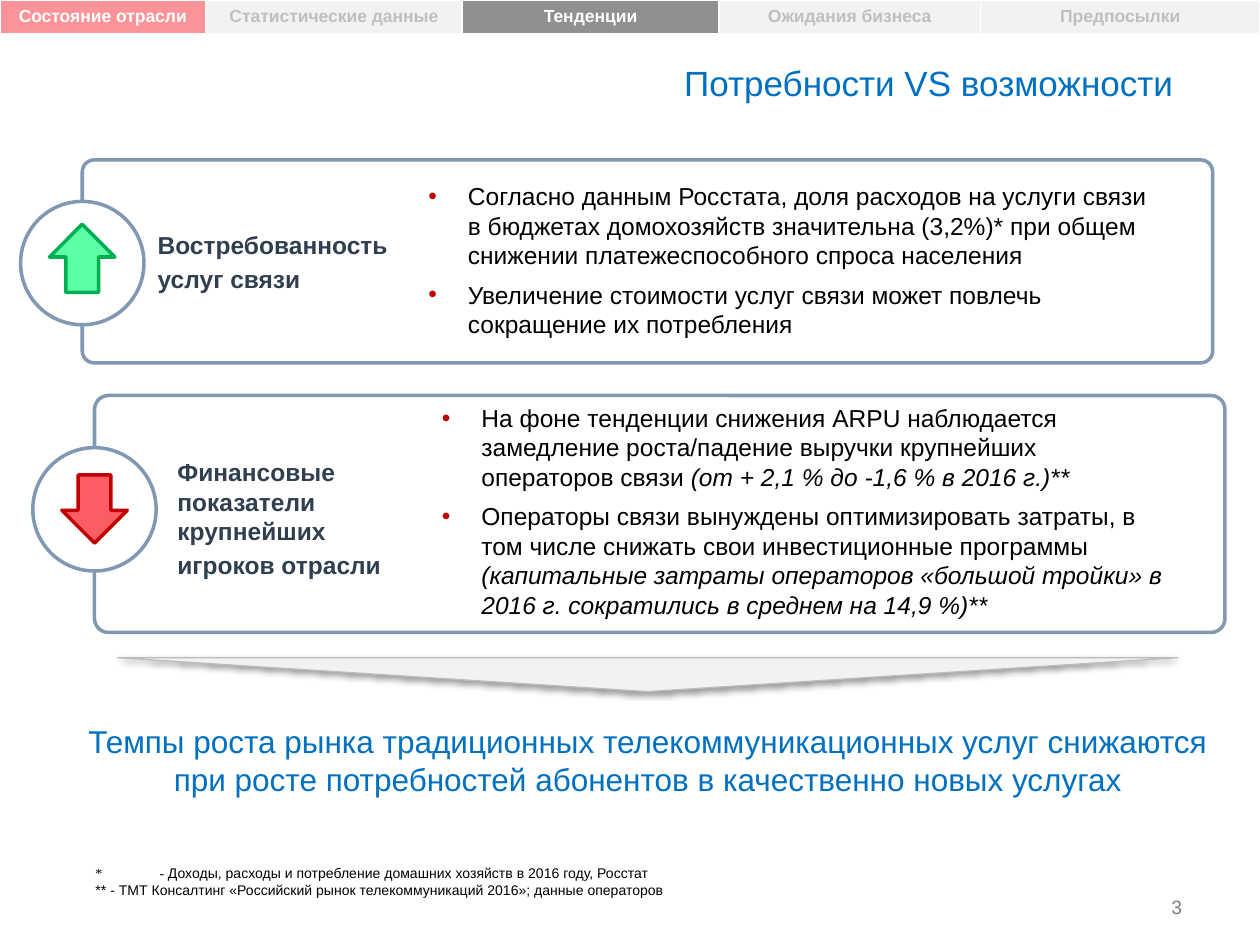
from dataclasses import dataclass

from lxml.etree import SubElement
from pptx import Presentation
from pptx.dml.color import RGBColor
from pptx.enum.shapes import MSO_SHAPE
from pptx.enum.text import MSO_ANCHOR, PP_ALIGN
from pptx.oxml.ns import qn
from pptx.util import Pt


@dataclass(frozen=True)
class Theme:
    """Colours, typeface and type sizes of the slide."""
    font: str = "Arial"
    marker_font: str = "Times New Roman"
    white: str = "FFFFFF"
    black: str = "000000"
    blue: str = "0070C0"
    label: str = "303F50"
    outline: str = "8098B2"
    bullet: str = "C00000"
    muted: str = "BFBFBF"
    pale: str = "F2F2F2"
    active: str = "909090"
    rose: str = "FC9398"
    edge: str = "BCBCBC"
    number: str = "7F7F7F"
    rise: tuple = ("5DFFA6", "00B050")
    fall: tuple = ("FB5D65", "C00000")
    title_size: int = 20
    conclusion_size: int = 18
    body_size: int = 14
    number_size: int = 11
    tab_size: int = 10
    note_size: int = 8


THEME = Theme()


def add_run(paragraph, text, size, color, **extra):
    """Append a run with its font formatting."""
    run = paragraph.add_run()
    run.text = text
    values = {"name": THEME.font, "size": Pt(size), **extra}
    for name, value in values.items():
        setattr(run.font, name, value)
    run.font.color.rgb = RGBColor.from_string(color)


def set_frame(frame, **extra):
    """Set wrapping, anchor and insets of a text frame."""
    values = {"word_wrap": True, "vertical_anchor": MSO_ANCHOR.TOP,
              "margin_left": Pt(7.2), "margin_right": Pt(7.2),
              "margin_top": Pt(3.6), "margin_bottom": Pt(3.6), **extra}
    for name, value in values.items():
        setattr(frame, name, value)


def write_lines(frame, lines, size, color, align=PP_ALIGN.LEFT, gap=0, **extra):
    """Write one paragraph per line, with a gap between paragraphs."""
    for index, line in enumerate(lines):
        paragraph = frame.paragraphs[0] if index == 0 else frame.add_paragraph()
        paragraph.alignment = align
        paragraph.space_before = Pt(gap if index else 0)
        add_run(paragraph, line, size, color, **extra)


def add_text(slide, box, lines, size, color, align, **insets):
    """Add a plain text box."""
    frame = slide.shapes.add_textbox(*map(Pt, box)).text_frame
    set_frame(frame, **insets)
    write_lines(frame, lines, size, color, align)


def add_figure(slide, kind, box, fill=None, line=None, width=2, adjust=None, rotation=0):
    """Add a preset shape with the given fill and line."""
    shape = slide.shapes.add_shape(kind, *map(Pt, box))
    shape.shadow.inherit = False
    shape.rotation = rotation
    if adjust is not None:
        shape.adjustments[0] = adjust
    if fill:
        shape.fill.solid()
        shape.fill.fore_color.rgb = RGBColor.from_string(fill)
    else:
        shape.fill.background()
    if line:
        shape.line.color.rgb = RGBColor.from_string(line)
        shape.line.width = Pt(width)
    else:
        shape.line.fill.background()
    return shape


def add_navigation(slide, box, tabs):
    """Add the one-row table of section tabs."""
    table = slide.shapes.add_table(1, len(tabs), *map(Pt, box)).table
    table.rows[0].height = Pt(box[3])
    for column, cell, (text, width, fill, color) in zip(table.columns, table.rows[0].cells, tabs):
        column.width = Pt(width)
        properties = cell._tc.get_or_add_tcPr()
        for side, weight in {"L": 1, "R": 1, "T": 1, "B": 3}.items():
            border = SubElement(properties, qn(f"a:ln{side}"), w=str(Pt(weight)))
            SubElement(SubElement(border, qn("a:solidFill")), qn("a:srgbClr"), val=THEME.white)
        cell.fill.solid()
        cell.fill.fore_color.rgb = RGBColor.from_string(fill)
        write_lines(cell.text_frame, [text], THEME.tab_size, color, PP_ALIGN.CENTER, bold=True)


def add_bullets(slide, box, items):
    """Add bulleted paragraphs whose second part is italic."""
    frame = slide.shapes.add_textbox(*map(Pt, box)).text_frame
    set_frame(frame)
    for index, (plain, italic) in enumerate(items):
        paragraph = frame.paragraphs[0] if index == 0 else frame.add_paragraph()
        properties = paragraph._p.get_or_add_pPr()
        properties.set("marL", str(Pt(22.5)))
        properties.set("indent", str(Pt(-22.5)))
        paragraph.space_before = Pt(5.75 if index else 0)
        SubElement(SubElement(properties, qn("a:buClr")), qn("a:srgbClr"), val=THEME.bullet)
        SubElement(properties, qn("a:buFont"), typeface=THEME.font)
        SubElement(properties, qn("a:buChar"), char="•")
        add_run(paragraph, plain, THEME.body_size, THEME.black)
        if italic:
            add_run(paragraph, italic, THEME.body_size, THEME.black, italic=True)


def add_panel(slide, box, label, label_offset, items, items_offset, circle_top, arrow_top, rotation, colors):
    """Add a framed panel with a round arrow badge, a label and bullets."""
    left, top, _, height = box
    badge, arrow_width, arrow_height = 70.5, 38.9, 37.4
    add_figure(slide, MSO_SHAPE.ROUNDED_RECTANGLE, box, line=THEME.outline, adjust=0.059)
    add_figure(slide, MSO_SHAPE.OVAL, (left - badge / 2, top + circle_top, badge, badge),
               THEME.white, THEME.outline)
    add_figure(slide, MSO_SHAPE.RIGHT_ARROW,
               (left - arrow_width / 2, top + arrow_top, arrow_width, arrow_height),
               *colors, rotation=rotation)
    caption = add_figure(slide, MSO_SHAPE.PENTAGON,
                         (left + label_offset[0], top + label_offset[1], 152, 116), adjust=0)
    set_frame(caption.text_frame, vertical_anchor=MSO_ANCHOR.MIDDLE, margin_right=0)
    write_lines(caption.text_frame, label, THEME.body_size, THEME.label, gap=2.8, bold=True)
    add_bullets(slide, (left + items_offset[0], top + items_offset[1], 432, height - 2 * items_offset[1]), items)


def add_pointer(slide, box):
    """Add the flat downward triangle with a soft shadow."""
    shape = add_figure(slide, MSO_SHAPE.ISOSCELES_TRIANGLE, box, THEME.pale, THEME.edge, 0.75, rotation=180)
    effects = shape._element.spPr.find(qn("a:effectLst"))
    shadow = SubElement(effects, qn("a:outerShdw"), blurRad=str(Pt(3.1)), dist=str(Pt(1.6)),
                        dir="5400000", rotWithShape="0")
    color = SubElement(shadow, qn("a:srgbClr"), val=THEME.black)
    SubElement(color, qn("a:alpha"), val="38000")


def add_footnotes(slide, box, notes):
    """Add source notes, each with its marker."""
    frame = slide.shapes.add_textbox(*map(Pt, box)).text_frame
    set_frame(frame)
    for index, (marker, font, text) in enumerate(notes):
        paragraph = frame.paragraphs[0] if index == 0 else frame.add_paragraph()
        properties = paragraph._p.get_or_add_pPr()
        properties.set("indent", str(Pt(35.3)))
        SubElement(SubElement(properties, qn("a:tabLst")), qn("a:tab"), pos=str(Pt(45)), algn="l")
        add_run(paragraph, marker, THEME.note_size, THEME.black, name=font)
        add_run(paragraph, text, THEME.note_size, THEME.black)


def main():
    """Build the slide and save it."""
    presentation = Presentation()
    presentation.slide_width, presentation.slide_height = Pt(720), Pt(540)
    slide = presentation.slides.add_slide(presentation.slide_layouts[6])
    add_text(slide, (224, 31.7, 459.3, 31.7), ["Потребности VS возможности"],
             THEME.title_size, THEME.blue, PP_ALIGN.RIGHT, margin_right=Pt(12.8))
    add_panel(slide, (47, 91.4, 646, 116), ["Востребованность", "услуг связи"], (36, 0), [
        ("Согласно данным Росстата, доля расходов на услуги связи в бюджетах домохозяйств значительна (3,2%)* "
         "при общем снижении платежеспособного спроса населения", ""),
        ("Увеличение стоимости услуг связи может повлечь сокращение их потребления", ""),
    ], (190.8, 8.7), 23.7, 37.5, 270, THEME.rise)
    add_panel(slide, (54, 226, 646, 135.4),
              ["Финансовые показатели крупнейших", "игроков отрасли"], (40.3, 12.3), [
        ("На фоне тенденции снижения ARPU наблюдается замедление роста/падение выручки крупнейших "
         "операторов связи ", "(от + 2,1 % до -1,6 % в 2016 г.)**"),
        ("Операторы связи вынуждены оптимизировать затраты, в том числе снижать свои инвестиционные программы ",
         "(капитальные затраты операторов «большой тройки» в 2016 г. сократились в среднем на 14,9 %)**"),
    ], (191.5, 0.8), 29.8, 46.2, 90, THEME.fall)
    add_pointer(slide, (67, 375.8, 606, 19.4))
    add_text(slide, (35.3, 409, 670, 51),
             ["Темпы роста рынка традиционных телекоммуникационных услуг снижаются",
              "при росте потребностей абонентов в качественно новых услугах"],
             THEME.conclusion_size, THEME.blue, PP_ALIGN.CENTER)
    add_navigation(slide, (0, 0, 720, 20), [
        ("Состояние отрасли", 117.4, THEME.rose, THEME.white),
        ("Статистические данные", 146.7, THEME.pale, THEME.muted),
        ("Тенденции", 146.7, THEME.active, THEME.white),
        ("Ожидания бизнеса", 149.5, THEME.pale, THEME.muted),
        ("Предпосылки", 159.7, THEME.pale, THEME.muted)])
    add_footnotes(slide, (12.2, 490.5, 436, 26.6), [
        ("*\t- ", THEME.marker_font, "Доходы, расходы и потребление домашних хозяйств в 2016 году, Росстат"),
        ("** - ", THEME.font, "ТМТ Консалтинг «Российский рынок телекоммуникаций 2016»; данные операторов")])
    add_text(slide, (609, 508.3, 73.5, 20.9), ["3"], THEME.number_size, THEME.number, PP_ALIGN.RIGHT)
    presentation.save("out.pptx")


if __name__ == "__main__":
    main()
